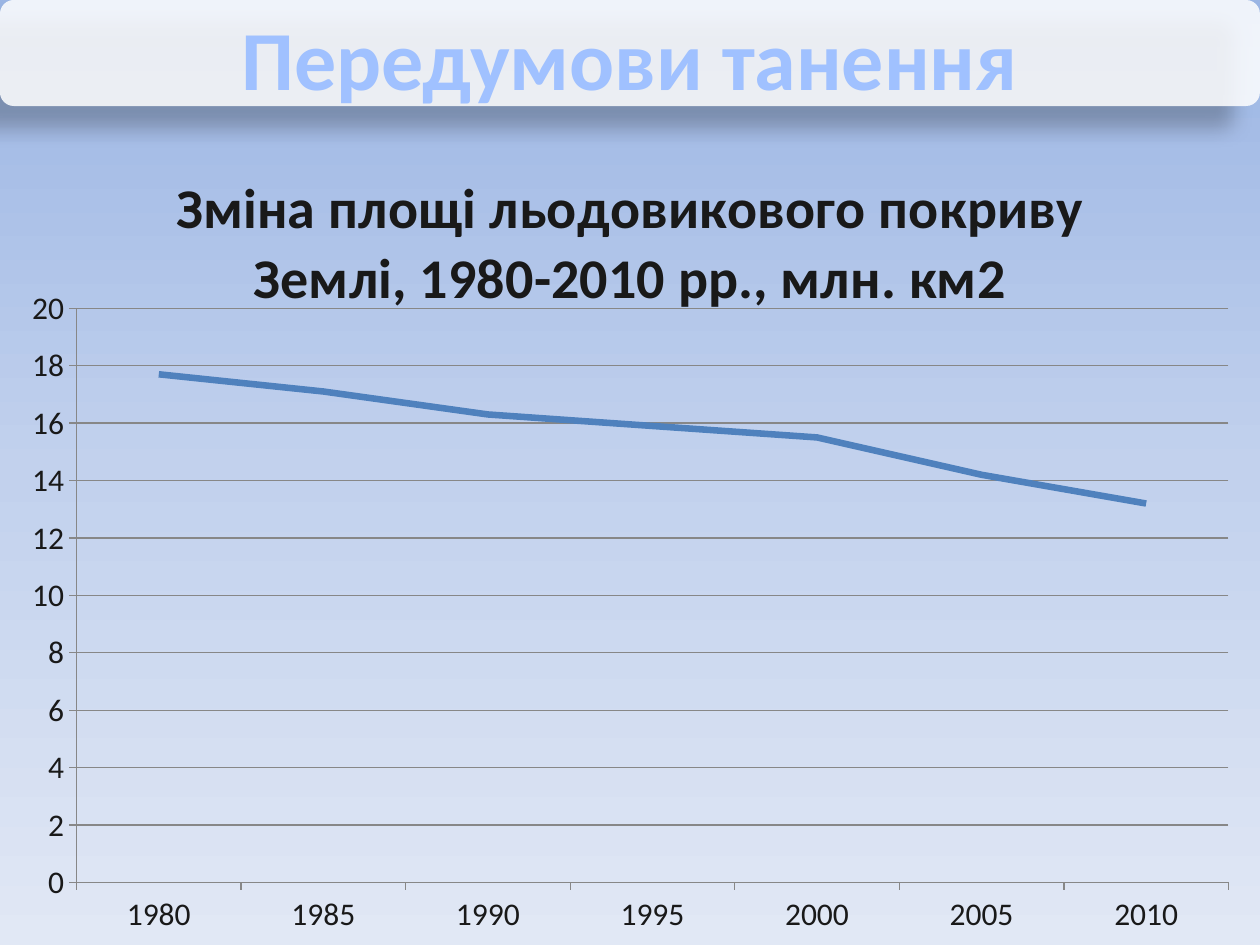
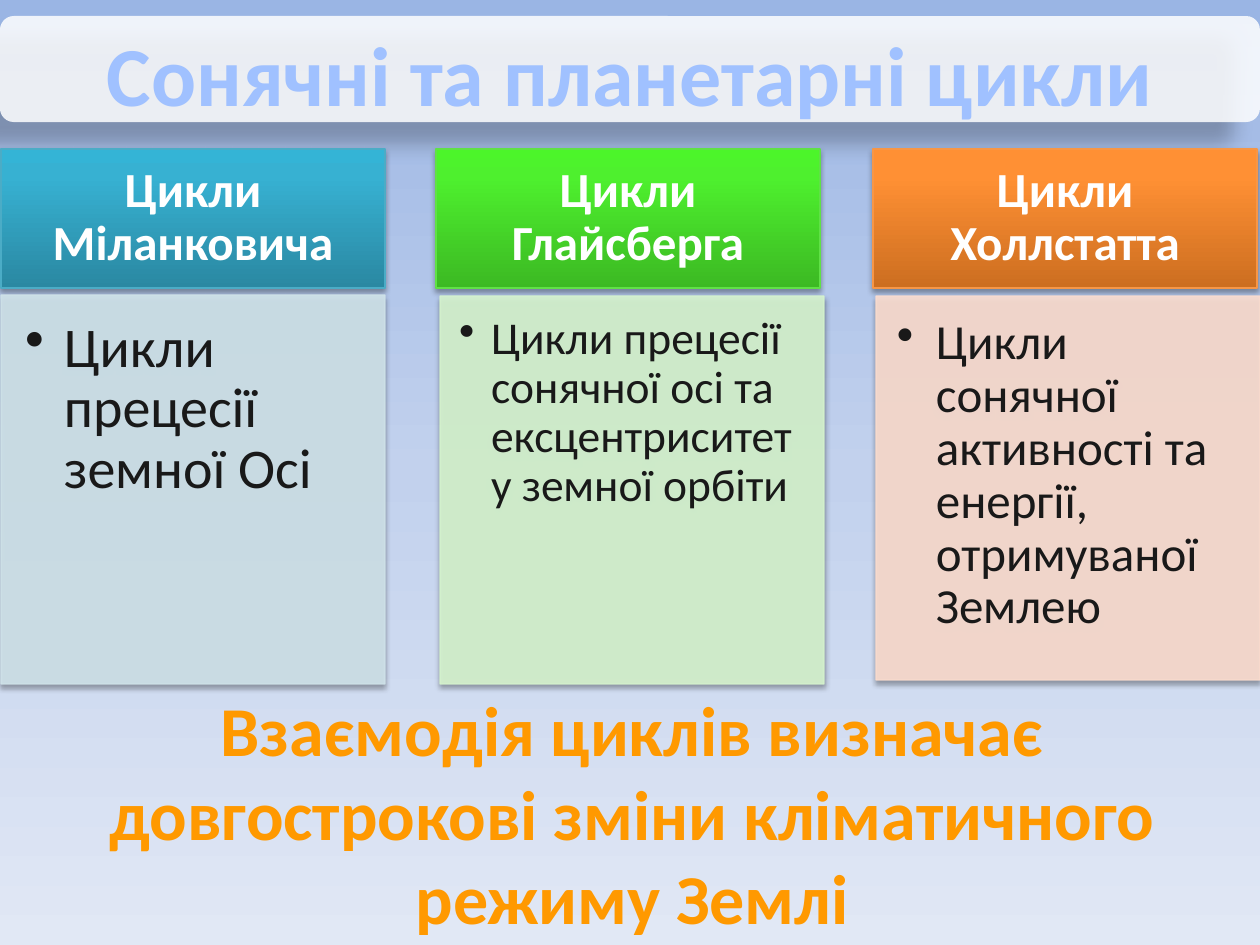
from dataclasses import dataclass

from pptx import Presentation
from pptx.chart.data import CategoryChartData
from pptx.dml.color import RGBColor
from pptx.enum.chart import XL_CHART_TYPE, XL_TICK_MARK
from pptx.enum.shapes import MSO_SHAPE
from pptx.enum.text import MSO_ANCHOR, MSO_AUTO_SIZE, PP_ALIGN
from pptx.oxml import parse_xml
from pptx.oxml.ns import nsdecls, qn
from pptx.util import Emu, Pt

PIXELS_PER_INCH = 126
SLIDE_WIDTH, SLIDE_HEIGHT = 1260, 945


@dataclass(frozen=True)
class Theme:
    font: str = "Calibri"
    title_size: int = 48
    closing_size: int = 40
    chart_title_size: int = 32
    heading_size: int = 28
    axis_size: int = 18
    text: str = "191919"
    white: str = "FFFFFF"
    black: str = "000000"
    closing: str = "FF9900"
    closing_outline: str = "984807"
    title_outline: str = "467AB8"
    series: str = "4F81BD"
    axis: str = "878787"
    background: tuple = ((0, "9AB5E4"), (50, "C2D1ED"), (100, "E1E8F5"))
    title: tuple = ((0, "BFD3F9"), (9, "A0C1FF"), (50, "003D85"),
                    (79, "A0C1FF"), (100, "BFD3F9"))
    band_shadow: tuple = (28, 11.8, 19.7, 141)
    card_shadow: tuple = (35, 3.1, 1.8, 90)


THEME = Theme()


@dataclass(frozen=True)
class Cycle:
    heading: str
    description: str
    size: int
    indent: int
    heading_left: int
    body_box: tuple
    gradient: tuple
    border: str
    tint: str


CYCLES = (
    Cycle("Цикли Міланковича", "Цикли прецесії земної Осі", 32, 39, 1,
          (1, 295, 384, 389),
          ((0, "2A88A2"), (80, "37B1D2"), (100, "34B4D6")), "4BACC6", "D0E3EA"),
    Cycle("Цикли Глайсберга",
          "Цикли прецесії сонячної осі та ексцентриситету земної орбіти", 26, 32, 436,
          (440, 296, 384, 388),
          ((0, "3CB923"), (80, "4EF02E"), (100, "4CF52A")), "60E146", "D6F4CE"),
    Cycle("Цикли Холлстатта",
          "Цикли сонячної активності та енергії, отримуваної Землею", 28, 39, 873,
          (876, 296, 384, 384),
          ((0, "CC6E20"), (80, "FF9034"), (100, "FF9136")), "F79646", "FCDDCF"),
)

ICE_AREA = {"1980": 17.7, "1985": 17.1, "1990": 16.3, "1995": 15.9,
            "2000": 15.5, "2005": 14.2, "2010": 13.2}


def px(length):
    return Emu(round(length * 914400 / PIXELS_PER_INCH))


def color(value):
    return RGBColor.from_string(value)


def apply_format(target, values):
    for name, value in values.items():
        setattr(target, name, value)


def format_font(font, size, bold=False, rgb=None):
    apply_format(font, {"name": THEME.font, "size": Pt(size), "bold": bold})
    if rgb:
        font.color.rgb = color(rgb)


def apply_gradient(fill, element, stops, angle):
    fill.gradient()
    gradient = element.find(".//" + qn("a:gradFill"))
    stop_xml = "".join(
        f'<a:gs pos="{position * 1000}"><a:srgbClr val="{value}"/></a:gs>'
        for position, value in stops)
    gradient.getparent().replace(gradient, parse_xml(
        f'<a:gradFill {nsdecls("a")} rotWithShape="1"><a:gsLst>{stop_xml}</a:gsLst>'
        f'<a:lin ang="{angle * 60000}" scaled="0"/></a:gradFill>'))


def apply_solid(fill, value, opacity):
    fill.solid()
    fill.fore_color.rgb = color(value)
    solid = fill._xPr.find(qn("a:solidFill"))
    solid[0].append(parse_xml(f'<a:alpha {nsdecls("a")} val="{opacity * 1000}"/>'))


def apply_shadow(shape, opacity, blur, distance, direction):
    shape.shadow.inherit = False
    shape._element.spPr.find(qn("a:effectLst")).append(parse_xml(
        f'<a:outerShdw {nsdecls("a")} blurRad="{Pt(blur)}" dist="{Pt(distance)}" '
        f'dir="{direction * 60000}" rotWithShape="0"><a:srgbClr val="{THEME.black}">'
        f'<a:alpha val="{opacity * 1000}"/></a:srgbClr></a:outerShdw>'))


def outline_text(run, value):
    run._r.get_or_add_rPr().insert(0, parse_xml(
        f'<a:ln {nsdecls("a")} w="{Pt(0.83)}"><a:solidFill>'
        f'<a:srgbClr val="{value}"/></a:solidFill></a:ln>'))


def add_shape(slide, kind, box, shadow):
    shape = slide.shapes.add_shape(kind, *map(px, box))
    apply_shadow(shape, *shadow)
    return shape


def add_centred_text(slide, text, box, size):
    text_box = slide.shapes.add_textbox(*map(px, box))
    apply_format(text_box.text_frame,
                 {"word_wrap": True, "auto_size": MSO_AUTO_SIZE.SHAPE_TO_FIT_TEXT})
    paragraph = text_box.text_frame.paragraphs[0]
    paragraph.alignment = PP_ALIGN.CENTER
    run = paragraph.add_run()
    run.text = text
    format_font(run.font, size, True)
    return run


def write_in_shape(shape, text, insets, anchor, alignment):
    margins = ("margin_left", "margin_top", "margin_right", "margin_bottom")
    apply_format(shape.text_frame, {
        "word_wrap": True, "vertical_anchor": anchor,
        **{name: px(inset) for name, inset in zip(margins, insets)}})
    paragraph = shape.text_frame.paragraphs[0]
    apply_format(paragraph, {"alignment": alignment, "line_spacing": 0.9})
    run = paragraph.add_run()
    run.text = text
    return paragraph, run


def add_bullet(paragraph, indent):
    properties = paragraph._p.get_or_add_pPr()
    properties.set("marL", str(px(indent)))
    properties.set("indent", str(-px(indent)))
    properties.append(parse_xml(f'<a:buChar {nsdecls("a")} char="•"/>'))


def add_titled_slide(presentation, title, top):
    slide = presentation.slides.add_slide(presentation.slide_layouts[6])
    apply_gradient(slide.background.fill, slide._element, THEME.background, 90)
    band = add_shape(slide, MSO_SHAPE.ROUNDED_RECTANGLE,
                     (0, top, SLIDE_WIDTH, 106), THEME.band_shadow)
    band.adjustments[0] = 0.13
    apply_solid(band.fill, THEME.white, 85)
    band.line.fill.background()
    run = add_centred_text(slide, title, (0, top, SLIDE_WIDTH, 115), THEME.title_size)
    apply_gradient(run.font.fill, run._r, THEME.title, 90)
    outline_text(run, THEME.title_outline)
    return slide


def set_plot_layout(chart, left, top, width, height):
    plot_area = chart._chartSpace.chart.plotArea
    for layout in plot_area.findall(qn("c:layout")):
        plot_area.remove(layout)
    plot_area.insert(0, parse_xml(
        f'<c:layout {nsdecls("c")}><c:manualLayout><c:layoutTarget val="inner"/>'
        f'<c:xMode val="edge"/><c:yMode val="edge"/><c:x val="{left}"/><c:y val="{top}"/>'
        f'<c:w val="{width}"/><c:h val="{height}"/></c:manualLayout></c:layout>'))


def add_line_chart(slide, title, values, box):
    data = CategoryChartData()
    data.categories = list(values)
    data.add_series("Series 1", list(values.values()))
    chart = slide.shapes.add_chart(XL_CHART_TYPE.LINE, *map(px, box), data).chart
    apply_format(chart, {"has_legend": False, "has_title": True})
    format_font(chart.font, THEME.axis_size, rgb=THEME.text)
    chart.chart_title.text_frame.text = title
    chart.chart_title.include_in_layout = False
    title_run = chart.chart_title.text_frame.paragraphs[0].runs[0]
    format_font(title_run.font, THEME.chart_title_size, True, THEME.text)
    set_plot_layout(chart, 0.06, 0.214, 0.915, 0.709)

    chart.plots[0].vary_by_categories = False
    series = chart.plots[0].series[0]
    series.smooth = False
    series.format.line.width = Pt(3.75)
    series.format.line.color.rgb = color(THEME.series)

    value_axis, category_axis = chart.value_axis, chart.category_axis
    apply_format(value_axis, {"minimum_scale": 0, "maximum_scale": 20,
                              "major_unit": 2, "has_major_gridlines": True})
    for axis in (value_axis, category_axis):
        apply_format(axis, {"major_tick_mark": XL_TICK_MARK.OUTSIDE,
                            "minor_tick_mark": XL_TICK_MARK.NONE})
    for lines in (value_axis, category_axis, value_axis.major_gridlines):
        lines.format.line.color.rgb = color(THEME.axis)
        lines.format.line.width = Pt(0.75)


def add_cycle(slide, cycle):
    heading = add_shape(slide, MSO_SHAPE.RECTANGLE,
                        (cycle.heading_left, 149, 384, 139), THEME.card_shadow)
    apply_gradient(heading.fill, heading._element, cycle.gradient, 270)
    heading.line.color.rgb = color(cycle.border)
    _, run = write_in_shape(heading, cycle.heading, (28, 15, 28, 15),
                            MSO_ANCHOR.MIDDLE, PP_ALIGN.CENTER)
    format_font(run.font, THEME.heading_size, True, THEME.white)

    body = add_shape(slide, MSO_SHAPE.RECTANGLE, cycle.body_box, THEME.card_shadow)
    apply_solid(body.fill, cycle.tint, 90)
    body.line.fill.solid()
    apply_solid(body.line.fill, cycle.tint, 90)
    for shape in (heading, body):
        shape.line.width = Pt(0.75)
    near_inset = int(cycle.size * 0.75)
    insets = (near_inset, near_inset, cycle.size, round(cycle.size * 1.1))
    paragraph, run = write_in_shape(body, cycle.description, insets,
                                    MSO_ANCHOR.TOP, PP_ALIGN.LEFT)
    add_bullet(paragraph, cycle.indent)
    format_font(run.font, cycle.size, rgb=THEME.text)


def main():
    presentation = Presentation()
    apply_format(presentation, {"slide_width": px(SLIDE_WIDTH),
                                "slide_height": px(SLIDE_HEIGHT)})

    melting = add_titled_slide(presentation, "Передумови танення", 0)
    add_line_chart(melting,
                   "Зміна площі льодовикового покриву Землі, 1980-2010 рр., млн. км2",
                   ICE_AREA, (1, 135, 1259, 810))

    cycles = add_titled_slide(presentation, "Сонячні та планетарні цикли", 16)
    for cycle in CYCLES:
        add_cycle(cycles, cycle)
    closing = add_centred_text(
        cycles, "Взаємодія циклів визначає довгострокові зміни кліматичного режиму Землі",
        (4, 680, 1256, 267), THEME.closing_size)
    closing.font.color.rgb = color(THEME.closing)
    outline_text(closing, THEME.closing_outline)

    presentation.save("out.pptx")


if __name__ == "__main__":
    main()
